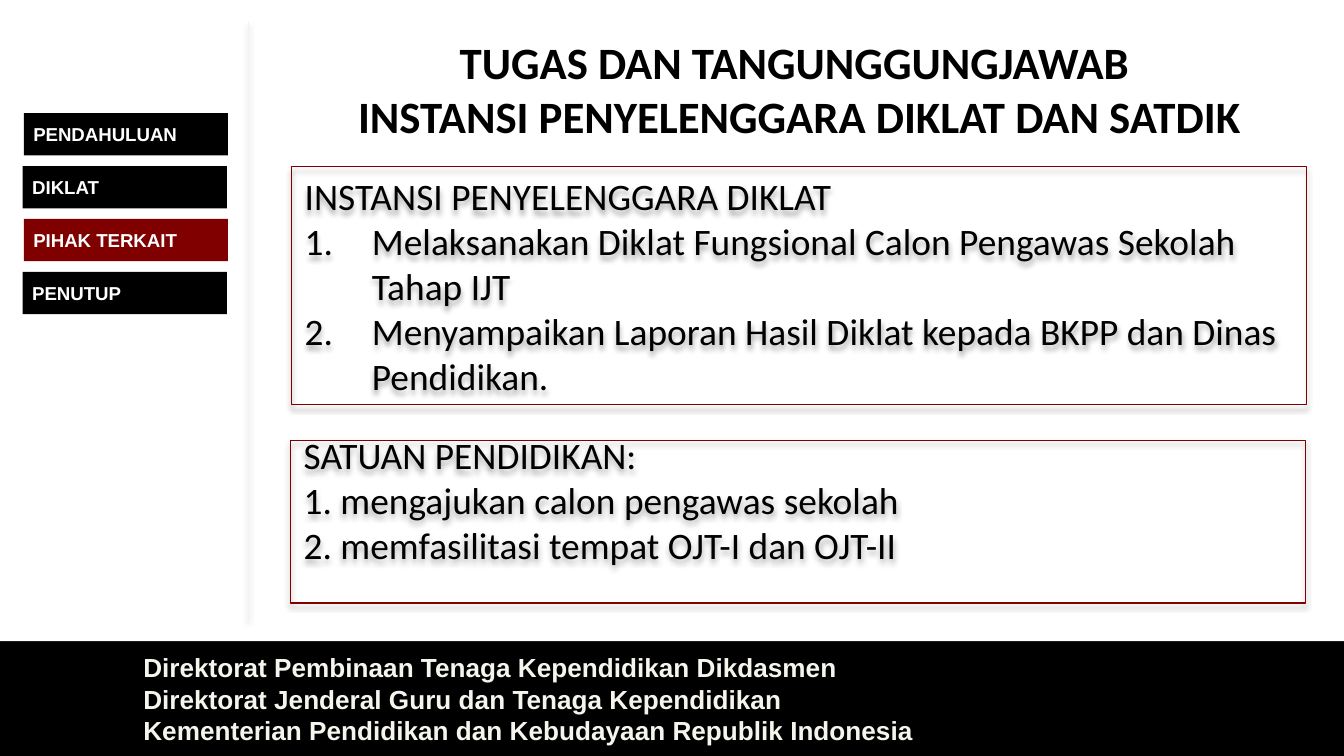
from lxml import etree
from pptx import Presentation
from pptx.dml.color import RGBColor
from pptx.enum.shapes import MSO_CONNECTOR, MSO_SHAPE
from pptx.enum.text import MSO_ANCHOR, PP_ALIGN
from pptx.oxml.ns import qn
from pptx.util import Cm, Pt

RECTANGLE = MSO_SHAPE.RECTANGLE
STRAIGHT = MSO_CONNECTOR.STRAIGHT
MIDDLE = MSO_ANCHOR.MIDDLE
LEFT, CENTER = PP_ALIGN.LEFT, PP_ALIGN.CENTER

BLACK = RGBColor(0x00, 0x00, 0x00)
WHITE = RGBColor(0xFF, 0xFF, 0xFF)
MAROON = RGBColor(0x80, 0x00, 0x00)
IVORY = RGBColor(0xF5, 0xF4, 0xED)
PALE_GRAY = RGBColor(0xF2, 0xF2, 0xF2)


def write_text(shape, text, font_name, size, color, bold=False, alignment=LEFT):
    text_frame = shape.text_frame
    text_frame.word_wrap = True
    text_frame.text = text
    for paragraph in text_frame.paragraphs:
        paragraph.alignment = alignment
        for run in paragraph.runs:
            run.font.name = font_name
            run.font.size = Pt(size)
            run.font.bold = bold
            run.font.color.rgb = color


def add_shadow(shape):
    """Give the shape or connector a soft black shadow straight below it."""
    properties = shape.element.spPr
    effects = properties.find(qn("a:effectLst"))
    if effects is None:
        effects = etree.SubElement(properties, qn("a:effectLst"))
    shadow = etree.SubElement(effects, qn("a:outerShdw"), blurRad=str(Pt(3.1)),
                              dist=str(Pt(1.8)), dir="5400000", rotWithShape="0")
    color = etree.SubElement(shadow, qn("a:srgbClr"), val=str(BLACK))
    etree.SubElement(color, qn("a:alpha"), val="35000")


presentation = Presentation()
presentation.slide_width = Cm(25.4)
presentation.slide_height = Cm(14.29)
slide = presentation.slides.add_slide(presentation.slide_layouts[6])
slide.background.fill.solid()
slide.background.fill.fore_color.rgb = BLACK

# White content area above the black footer
content_area = slide.shapes.add_shape(RECTANGLE, 0, 0, Cm(25.4), Cm(12.12))
content_area.shadow.inherit = False
content_area.fill.solid()
content_area.fill.fore_color.rgb = WHITE
content_area.line.fill.background()

footer = slide.shapes.add_shape(RECTANGLE, Cm(2.46), Cm(12.17), Cm(22.91), Cm(2.08))
footer.shadow.inherit = False
footer.fill.solid()
footer.fill.fore_color.rgb = BLACK
footer.line.fill.background()
footer.text_frame.vertical_anchor = MIDDLE
write_text(footer, "Direktorat Pembinaan Tenaga Kependidikan Dikdasmen\n"
           "Direktorat Jenderal Guru dan Tenaga Kependidikan\n"
           "Kementerian Pendidikan dan Kebudayaan Republik Indonesia",
           "Arial", 14, IVORY, bold=True)
add_shadow(footer)

# Section menu, one button per centimetre
menu = [("PENDAHULUAN", 0.45, BLACK), ("DIKLAT", 0.43, BLACK),
        ("PIHAK TERKAIT", 0.45, MAROON), ("PENUTUP", 0.43, BLACK)]
for index, (label, left, color) in enumerate(menu):
    button = slide.shapes.add_shape(RECTANGLE, Cm(left), Cm(2.14 + index),
                                    Cm(3.86), Cm(0.8))
    button.shadow.inherit = False
    button.fill.solid()
    button.fill.fore_color.rgb = color
    button.line.fill.background()
    text_frame = button.text_frame
    text_frame.vertical_anchor = MIDDLE
    text_frame.margin_left = text_frame.margin_right = Cm(0.18)
    text_frame.margin_top = text_frame.margin_bottom = Cm(0.1)
    write_text(button, label, "Arial", 10, WHITE, bold=True)

title = slide.shapes.add_textbox(Cm(5.51), Cm(0.53), Cm(19.2), Cm(2.31))
write_text(title, "TUGAS DAN TANGUNGGUNGJAWAB \nINSTANSI PENYELENGGARA DIKLAT DAN SATDIK",
           "Calibri", 24, BLACK, bold=True, alignment=CENTER)

# Duty boxes: left, top, height, bottom margin, text
duties = [
    (5.51, 3.15, 4.5, 0.13,
     "INSTANSI PENYELENGGARA DIKLAT\n"
     "Melaksanakan Diklat Fungsional Calon Pengawas Sekolah Tahap IJT\n"
     "Menyampaikan Laporan Hasil Diklat kepada BKPP dan Dinas Pendidikan."),
    (5.49, 8.33, 3.07, 0.97,
     "SATUAN PENDIDIKAN:\n"
     "1. mengajukan calon pengawas sekolah\n"
     "2. memfasilitasi tempat OJT-I dan OJT-II"),
]
duty_boxes = []
for left, top, height, bottom_margin, text in duties:
    box = slide.shapes.add_shape(RECTANGLE, Cm(left), Cm(top), Cm(19.18), Cm(height))
    box.shadow.inherit = False
    box.fill.background()
    box.line.color.rgb = MAROON
    box.line.width = Pt(0.75)
    box.text_frame.vertical_anchor = MIDDLE
    box.text_frame.margin_bottom = Cm(bottom_margin)
    write_text(box, text, "Calibri", 20, BLACK)
    add_shadow(box)
    duty_boxes.append(box)

for paragraph in duty_boxes[0].text_frame.paragraphs[1:]:
    properties = paragraph._p.get_or_add_pPr()
    properties.set("marL", str(Cm(1.27)))
    properties.set("indent", str(Cm(-1.27)))
    etree.SubElement(properties, qn("a:buFont"), typeface="+mj-lt")
    etree.SubElement(properties, qn("a:buAutoNum"), type="arabicPeriod")

divider = slide.shapes.add_connector(STRAIGHT, Cm(4.7), Cm(0.41), Cm(4.7), Cm(11.73))
divider.line.color.rgb = PALE_GRAY
divider.line.width = Pt(0.25)
add_shadow(divider)

presentation.save("out.pptx")
